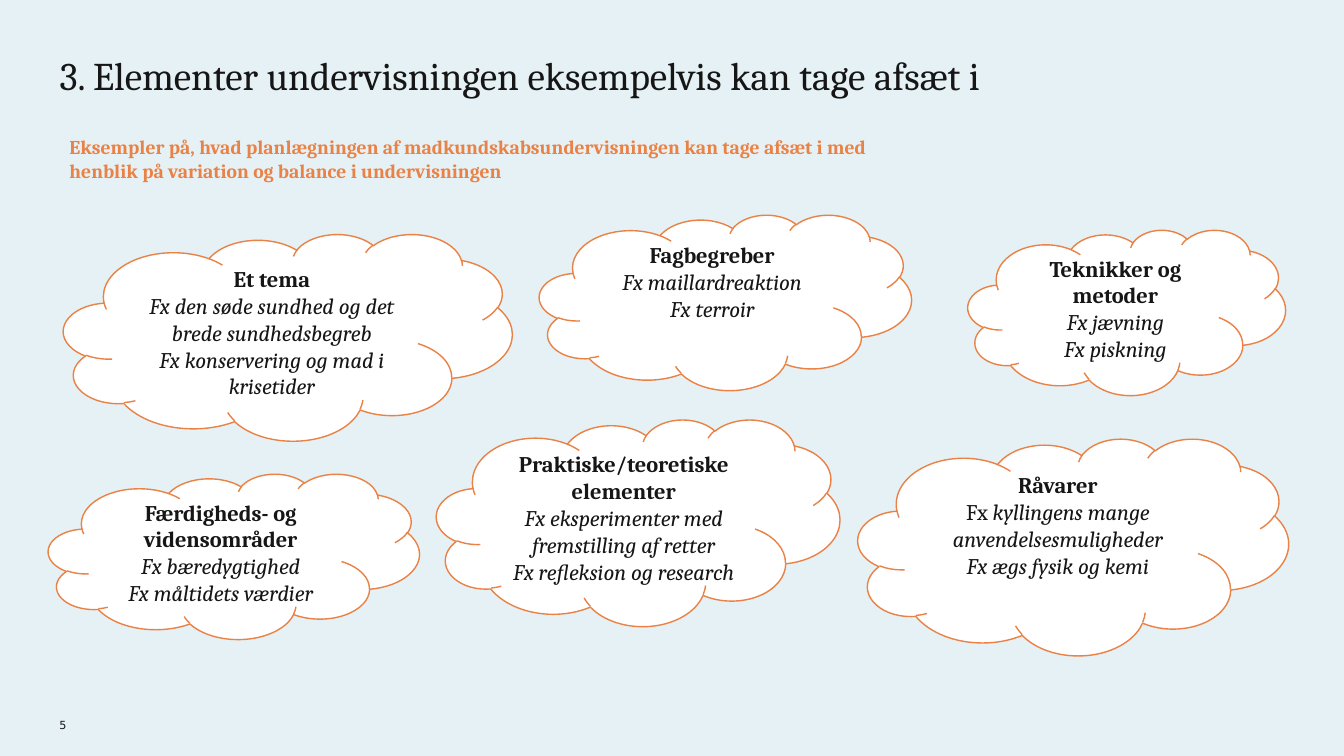
from dataclasses import dataclass

import pptx
import pptx.dml.color
import pptx.enum.shapes
import pptx.enum.text
import pptx.util

EMU_PER_PX = 9144  # 100 px to the inch
SERIF, SANS = "Cambria", "DejaVu Sans"
INK, ORANGE, WHITE, PALE_BLUE = "161616", "EA8145", "FFFFFF", "E5F1F4"
ALIGN = pptx.enum.text.PP_ALIGN
ANCHOR = pptx.enum.text.MSO_ANCHOR


@dataclass(frozen=True)
class Box:
    left: int
    top: int
    width: int
    height: int


@dataclass(frozen=True)
class Example:
    text: str
    upright: str = ""  # opening words that are not italic


@dataclass(frozen=True)
class Cloud:
    box: Box
    heading: str
    examples: tuple[Example, ...]


CLOUDS = (
    Cloud(Box(48, 470, 368, 164), "Færdigheds- og vidensområder",
          (Example("Fx bæredygtighed"), Example("Fx måltidets værdier"))),
    Cloud(Box(63, 232, 445, 205), "Et tema",
          (Example("Fx den søde sundhed og det brede sundhedsbegreb"),
           Example("Fx konservering og mad i krisetider"))),
    Cloud(Box(535, 213, 369, 174), "Fagbegreber",
          (Example("Fx maillardreaktion"), Example("Fx terroir"))),
    Cloud(Box(851, 435, 427, 215), "Råvarer",
          (Example("kyllingens mange anvendelsesmuligheder", upright="Fx "),
           Example("Fx ægs fysik og kemi"))),
    Cloud(Box(960, 228, 315, 164), "Teknikker og metoder",
          (Example("Fx jævning"), Example("Fx piskning"))),
    Cloud(Box(433, 416, 400, 205), "Praktiske/teoretiske elementer",
          (Example("Fx eksperimenter med fremstilling af retter"),
           Example("Fx refleksion og research"))),
)


def px(n: int) -> pptx.util.Emu:
    return pptx.util.Emu(n * EMU_PER_PX)


def rgb(color: str) -> pptx.dml.color.RGBColor:
    return pptx.dml.color.RGBColor.from_string(color)


def place(box: Box) -> tuple[pptx.util.Emu, ...]:
    return px(box.left), px(box.top), px(box.width), px(box.height)


def setup_frame(tf, anchor=ANCHOR.TOP, inset: bool = False) -> None:
    tf.word_wrap = True
    tf.auto_size = pptx.enum.text.MSO_AUTO_SIZE.NONE
    tf.vertical_anchor = anchor
    if not inset:
        tf.margin_left = tf.margin_top = tf.margin_right = tf.margin_bottom = 0


def format_paragraph(p, size: int, color: str = INK, name: str = SERIF,
                     align=ALIGN.LEFT, bold: bool = False) -> None:
    p.alignment = align
    p.font.size = pptx.util.Pt(size)
    p.font.name = name
    p.font.bold = bold
    p.font.color.rgb = rgb(color)


def add_title(s, box: Box, text: str) -> None:
    title = s.shapes.title
    title.left, title.top, title.width, title.height = place(box)
    setup_frame(title.text_frame)
    p = title.text_frame.paragraphs[0]
    p.text = text
    p.line_spacing = 0.83
    format_paragraph(p, 28)


def add_text(s, box: Box, text: str, size: int, color: str, name: str,
             bold: bool = False, anchor=ANCHOR.TOP, inset: bool = False) -> None:
    tf = s.shapes.add_textbox(*place(box)).text_frame
    setup_frame(tf, anchor, inset)
    p = tf.paragraphs[0]
    p.text = text
    format_paragraph(p, size, color, name, bold=bold)


def add_cloud(s, cloud: Cloud) -> None:
    sp = s.shapes.add_shape(pptx.enum.shapes.MSO_SHAPE.CLOUD, *place(cloud.box))
    sp.shadow.inherit = False
    sp.fill.solid()
    sp.fill.fore_color.rgb = rgb(WHITE)
    sp.line.color.rgb = rgb(ORANGE)
    sp.line.width = pptx.util.Pt(1)
    tf = sp.text_frame
    setup_frame(tf)
    p = tf.paragraphs[0]
    p.text = cloud.heading
    format_paragraph(p, 16, align=ALIGN.CENTER, bold=True)
    for example in cloud.examples:
        p = tf.add_paragraph()
        format_paragraph(p, 16, align=ALIGN.CENTER)
        p.font.italic = True
        if example.upright:
            r = p.add_run()
            r.text = example.upright
            r.font.italic = False
        p.add_run().text = example.text


def main() -> None:
    prs = pptx.Presentation()
    prs.slide_width, prs.slide_height = px(1333), px(750)
    s = prs.slides.add_slide(prs.slide_layouts[5])  # Title Only
    s.background.fill.solid()
    s.background.fill.fore_color.rgb = rgb(PALE_BLUE)

    # Title and page number
    add_title(s, Box(59, 59, 1012, 102),
              "3. Elementer undervisningen eksempelvis kan tage afsæt i")
    add_text(s, Box(59, 706, 30, 20), "5", 8, INK, SANS, anchor=ANCHOR.BOTTOM)

    # Introduction
    add_text(s, Box(59, 129, 878, 57),
             "Eksempler på, hvad planlægningen af madkundskabsundervisningen kan "
             "tage afsæt i med henblik på variation og balance i undervisningen",
             14, ORANGE, SERIF, bold=True, inset=True)

    # Clouds
    for cloud in CLOUDS:
        add_cloud(s, cloud)

    prs.save("out.pptx")


if __name__ == "__main__":
    main()
